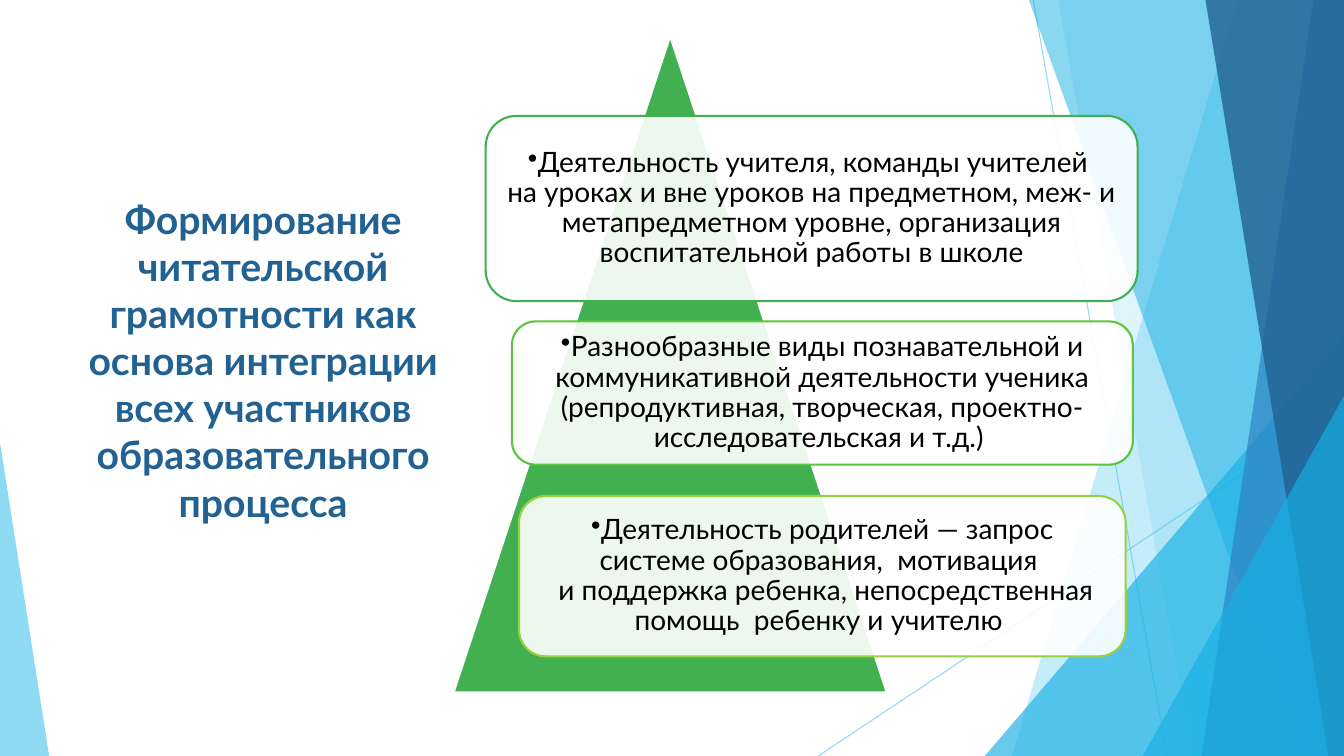
from dataclasses import dataclass

from lxml.etree import SubElement
from pptx import Presentation
from pptx.dml.color import RGBColor
from pptx.enum.shapes import MSO_CONNECTOR, MSO_SHAPE
from pptx.enum.text import MSO_ANCHOR, PP_ALIGN
from pptx.oxml.ns import qn
from pptx.util import Cm, Pt


@dataclass(frozen=True)
class Theme:
    font: str = "Lato"
    title_size: int = 28
    card_size: int = 20
    text: str = "000000"
    white: str = "FFFFFF"
    sky: str = "5FCBEF"
    azure: str = "17B0E4"
    blue: str = "2E83C3"
    navy: str = "226292"
    green: str = "42B051"
    leaf: str = "5CC43E"
    lime: str = "96D141"


THEME = Theme()
WIDTH, HEIGHT = 33.87, 19.05

TITLE = ("Формирование читательской грамотности как основа интеграции "
         "всех участников образовательного процесса")
TITLE_BOX = (1.27, 4.8, 10.72, 13.77)
PYRAMID_BOX = (11.43, 0.91, 10.92, 16.54)

# box (left, top, width, height), outline, text
CARDS = [
    ((12.24, 2.92, 16.43, 4.67), THEME.green,
     "Деятельность учителя, команды учителей \nна уроках и вне уроков на предметном, "
     "меж- и метапредметном уровне, организация воспитательной работы в школе"),
    ((12.9, 8.1, 15.65, 3.61), THEME.leaf,
     "Разнообразные виды познавательной и коммуникативной деятельности ученика "
     "(репродуктивная, творческая, проектно-исследовательская и т.д.) "),
    ((13.08, 12.5, 15.29, 4.04), THEME.lime,
     "Деятельность родителей — запрос системе образования,  мотивация \n и поддержка "
     "ребенка, непосредственная помощь  ребенку и учителю "),
]

RAYS = [((26.04, 0), (29.41, HEIGHT)), ((WIDTH, 10.24), (20.62, HEIGHT))]

# Bands reach the right edge: x at the top, x at the bottom, colour, opacity
BACK_BANDS = [(31.19, 25.5, THEME.sky, 36), (26.67, 30.05, THEME.sky, 20)]
FRONT_BANDS = [(25.93, 32.79, THEME.azure, 50), (33.1, 30.28, THEME.blue, 70),
               (30.38, 33.48, THEME.navy, 80)]

# Corners stand on the bottom edge: left, top, width, apex, colour, opacity
BACK_CORNERS = [(24.82, 8.46, 9.05, 1, THEME.azure, 66)]
FRONT_CORNERS = [(28.8, 9.98, 5.07, 1, THEME.azure, 66),
                 (0, 11.15, 1.24, 0, THEME.sky, 70)]


def set_opacity(fill_owner, percent):
    color = next(fill_owner.iter(qn("a:srgbClr")))
    SubElement(color, qn("a:alpha"), val=str(percent * 1000))


def paint(shape, color, opacity=100, outline=None):
    shape.shadow.inherit = False
    shape.fill.solid()
    shape.fill.fore_color.rgb = RGBColor.from_string(color)
    if opacity < 100:
        set_opacity(shape._element.spPr.find(qn("a:solidFill")), opacity)
    if outline:
        shape.line.color.rgb = RGBColor.from_string(outline)
        shape.line.width = Pt(1.5)
    else:
        shape.line.fill.background()


def add_preset(slide, kind, box):
    return slide.shapes.add_shape(kind, *map(Cm, box))


def add_ray(slide, start, end):
    ray = slide.shapes.add_connector(MSO_CONNECTOR.STRAIGHT, *map(Cm, start + end))
    ray.line.color.rgb = RGBColor.from_string(THEME.sky)
    ray.line.width = Pt(0.75)
    properties = ray._element.spPr
    set_opacity(properties, 70)
    SubElement(properties, qn("a:effectLst"))


def add_band(slide, top_x, bottom_x, color, opacity):
    builder = slide.shapes.build_freeform(Cm(top_x), 0)
    corners = [(WIDTH, 0), (WIDTH, HEIGHT), (bottom_x, HEIGHT)]
    builder.add_line_segments([(Cm(x), Cm(y)) for x, y in corners], close=True)
    paint(builder.convert_to_shape(), color, opacity)


def add_corner(slide, left, top, width, apex, color, opacity):
    corner = add_preset(slide, MSO_SHAPE.ISOSCELES_TRIANGLE,
                        (left, top, width, HEIGHT - top))
    corner.adjustments[0] = apex
    paint(corner, color, opacity)


def write(text_frame, text, size, color, bold=False):
    text_frame.word_wrap = True
    paragraph = text_frame.paragraphs[0]
    paragraph.text = text
    paragraph.alignment = PP_ALIGN.CENTER
    for run in paragraph.runs:
        run.font.name = THEME.font
        run.font.size = Pt(size)
        run.font.bold = bold
        run.font.color.rgb = RGBColor.from_string(color)
    return paragraph


def add_card(slide, box, outline, text):
    card = add_preset(slide, MSO_SHAPE.ROUNDED_RECTANGLE, box)
    paint(card, THEME.white, 90, outline)
    frame = card.text_frame
    frame.vertical_anchor = MSO_ANCHOR.MIDDLE
    frame.margin_left = frame.margin_right = Cm(0.2)
    frame.margin_top = frame.margin_bottom = Cm(0.2)
    paragraph = write(frame, text, THEME.card_size, THEME.text)
    paragraph.line_spacing = 0.9
    properties = paragraph._p.get_or_add_pPr()
    properties.set("marL", "0")
    properties.set("indent", "0")
    SubElement(properties, qn("a:buChar"), char="•")


def add_backdrop(slide):
    for ray in RAYS:
        add_ray(slide, *ray)
    for bands, corners in ((BACK_BANDS, BACK_CORNERS), (FRONT_BANDS, FRONT_CORNERS)):
        for band in bands:
            add_band(slide, *band)
        for corner in corners:
            add_corner(slide, *corner)


def main():
    presentation = Presentation()
    presentation.slide_width, presentation.slide_height = Cm(WIDTH), Cm(HEIGHT)
    slide = presentation.slides.add_slide(presentation.slide_layouts[6])

    add_backdrop(slide)
    title = slide.shapes.add_textbox(*map(Cm, TITLE_BOX))
    paragraph = write(title.text_frame, TITLE, THEME.title_size, THEME.navy, bold=True)
    paragraph.space_before = Pt(10)

    pyramid = add_preset(slide, MSO_SHAPE.ISOSCELES_TRIANGLE, PYRAMID_BOX)
    paint(pyramid, THEME.green, outline=THEME.white)
    for card in CARDS:
        add_card(slide, *card)

    presentation.save("out.pptx")


if __name__ == "__main__":
    main()
